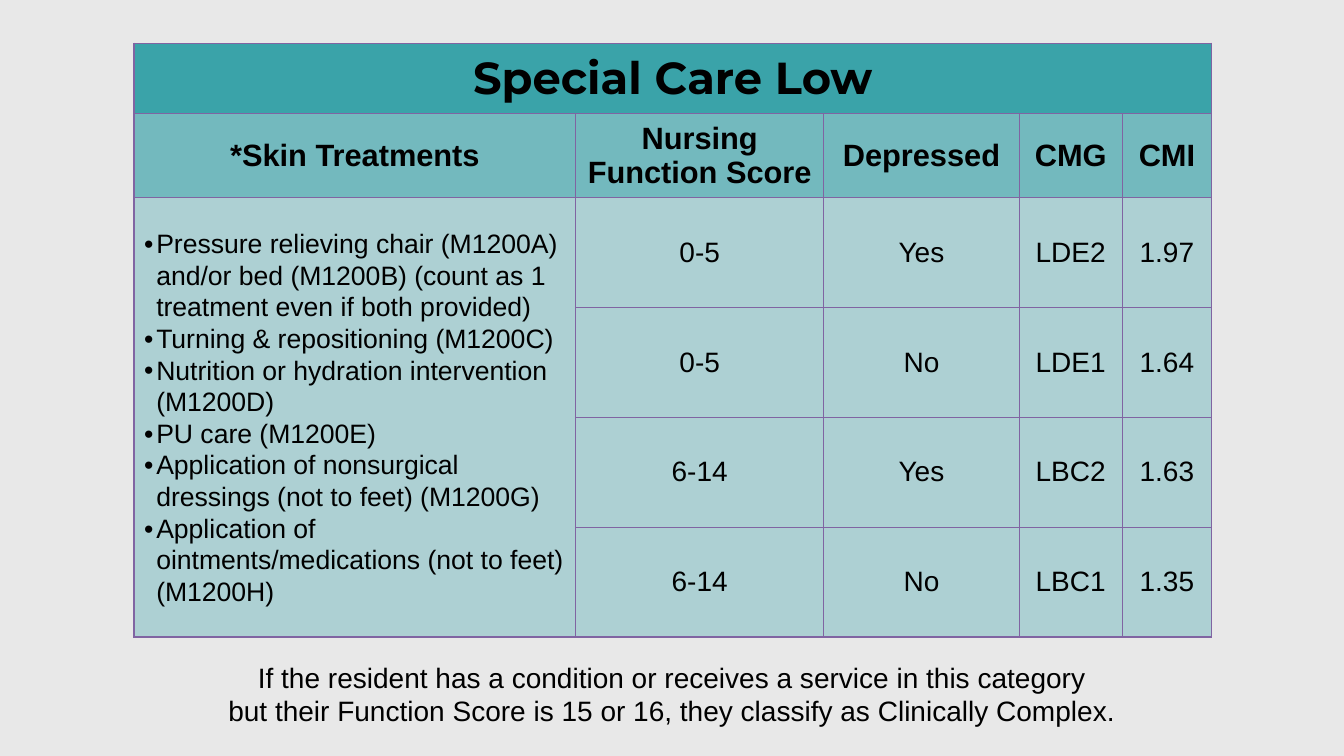
import pptx
import pptx.dml.color
import pptx.enum.text
import pptx.oxml
import pptx.oxml.ns
import pptx.util
from lxml import etree
from pptx.util import Inches

COLORS = {"background": "E8E8E8", "teal": "008C95", "border": "8064A2", "text": "000000"}
TITLE_OPACITY, HEADER_OPACITY, BODY_OPACITY = 75, 50, 25
COLUMN_WIDTHS = [4.38, 2.46, 1.94, 1.02, 0.89]
ROW_HEIGHTS = [0.7, 0.83] + [1.09] * 4
HEADERS = [["*Skin Treatments"], ["Nursing", "Function Score"], ["Depressed"], ["CMG"], ["CMI"]]
TREATMENTS = [
    "Pressure relieving chair (M1200A) and/or bed (M1200B) (count as 1 treatment even if both provided)",
    "Turning & repositioning (M1200C)",
    "Nutrition or hydration intervention (M1200D)",
    "PU care (M1200E)",
    "Application of nonsurgical dressings (not to feet) (M1200G)",
    "Application of ointments/medications (not to feet) (M1200H)",
]
SCORES = [
    ["0-5", "Yes", "LDE2", "1.97"],
    ["0-5", "No", "LDE1", "1.64"],
    ["6-14", "Yes", "LBC2", "1.63"],
    ["6-14", "No", "LBC1", "1.35"],
]
FOOTNOTE = [
    "If the resident has a condition or receives a service in this category",
    "but their Function Score is 15 or 16, they classify as Clinically Complex.",
]


def rgb(name):
    return pptx.dml.color.RGBColor.from_string(COLORS[name])


def add_child(parent, tag, **attributes):
    return etree.SubElement(parent, pptx.oxml.ns.qn(tag), attributes)


def write_lines(frame, lines, size, font="Arial", bold=False, bulleted=False):
    for index, line in enumerate(lines):
        paragraph = frame.add_paragraph() if index else frame.paragraphs[0]
        if bulleted:
            paragraph.line_spacing = 1.07
            properties = paragraph._p.get_or_add_pPr()
            properties.set("marL", str(Inches(0.12)))
            properties.set("indent", str(Inches(-0.12)))
            add_child(properties, "a:buFont", typeface="Arial")
            add_child(properties, "a:buChar", char="•")
        else:
            paragraph.alignment = pptx.enum.text.PP_ALIGN.CENTER
        run = paragraph.add_run()
        run.text = line
        run.font.name = font
        run.font.size = pptx.util.Pt(size)
        run.font.bold = bold
        run.font.color.rgb = rgb("text")


def style_cell(cell, opacity):
    """Centre the cell vertically, outline it and give it a translucent teal fill."""
    cell.vertical_anchor = pptx.enum.text.MSO_ANCHOR.MIDDLE
    properties = cell._tc.get_or_add_tcPr()
    for side in ("a:lnL", "a:lnR", "a:lnT", "a:lnB"):
        line = add_child(properties, side, w=str(pptx.util.Pt(1)))
        add_child(add_child(line, "a:solidFill"), "a:srgbClr", val=COLORS["border"])
    cell.fill.solid()
    cell.fill.fore_color.rgb = rgb("teal")
    color = properties.find(pptx.oxml.ns.qn("a:solidFill"))[0]
    add_child(color, "a:alpha", val=str(opacity * 1000))


def add_care_table(slide, left, top, width, height):
    table = slide.shapes.add_table(len(ROW_HEIGHTS), len(COLUMN_WIDTHS), Inches(left),
                                   Inches(top), Inches(width), Inches(height)).table
    for column, column_width in zip(table.columns, COLUMN_WIDTHS):
        column.width = Inches(column_width)
    opacities = [TITLE_OPACITY, HEADER_OPACITY] + [BODY_OPACITY] * len(SCORES)
    for row, row_height, opacity in zip(table.rows, ROW_HEIGHTS, opacities):
        row.height = Inches(row_height)
        for cell in row.cells:
            style_cell(cell, opacity)
    table.cell(0, 0).merge(table.cell(0, len(COLUMN_WIDTHS) - 1))
    table.cell(2, 0).merge(table.cell(len(ROW_HEIGHTS) - 1, 0))

    write_lines(table.cell(0, 0).text_frame, ["Special Care Low"], 32, "Montserrat", bold=True)
    for column_index, lines in enumerate(HEADERS):
        write_lines(table.cell(1, column_index).text_frame, lines, 22, bold=True)
    write_lines(table.cell(2, 0).text_frame, TREATMENTS, 19, bulleted=True)
    for row_index, values in enumerate(SCORES, start=2):
        for column_index, value in enumerate(values, start=1):
            write_lines(table.cell(row_index, column_index).text_frame, [value], 20)


def add_footnote(slide, left, top, width, height):
    box = slide.shapes.add_textbox(Inches(left), Inches(top), Inches(width), Inches(height))
    box.text_frame.word_wrap = True
    write_lines(box.text_frame, FOOTNOTE, 20)


def main():
    presentation = pptx.Presentation()
    presentation.slide_width = Inches(13.33)
    presentation.slide_height = Inches(7.5)
    slide = presentation.slides.add_slide(presentation.slide_layouts[6])
    slide.background.fill.solid()
    slide.background.fill.fore_color.rgb = rgb("background")
    add_care_table(slide, 1.33, 0.43, sum(COLUMN_WIDTHS), sum(ROW_HEIGHTS))
    add_footnote(slide, 1.59, 6.5, 10.15, 1)
    presentation.save("out.pptx")


if __name__ == "__main__":
    main()
